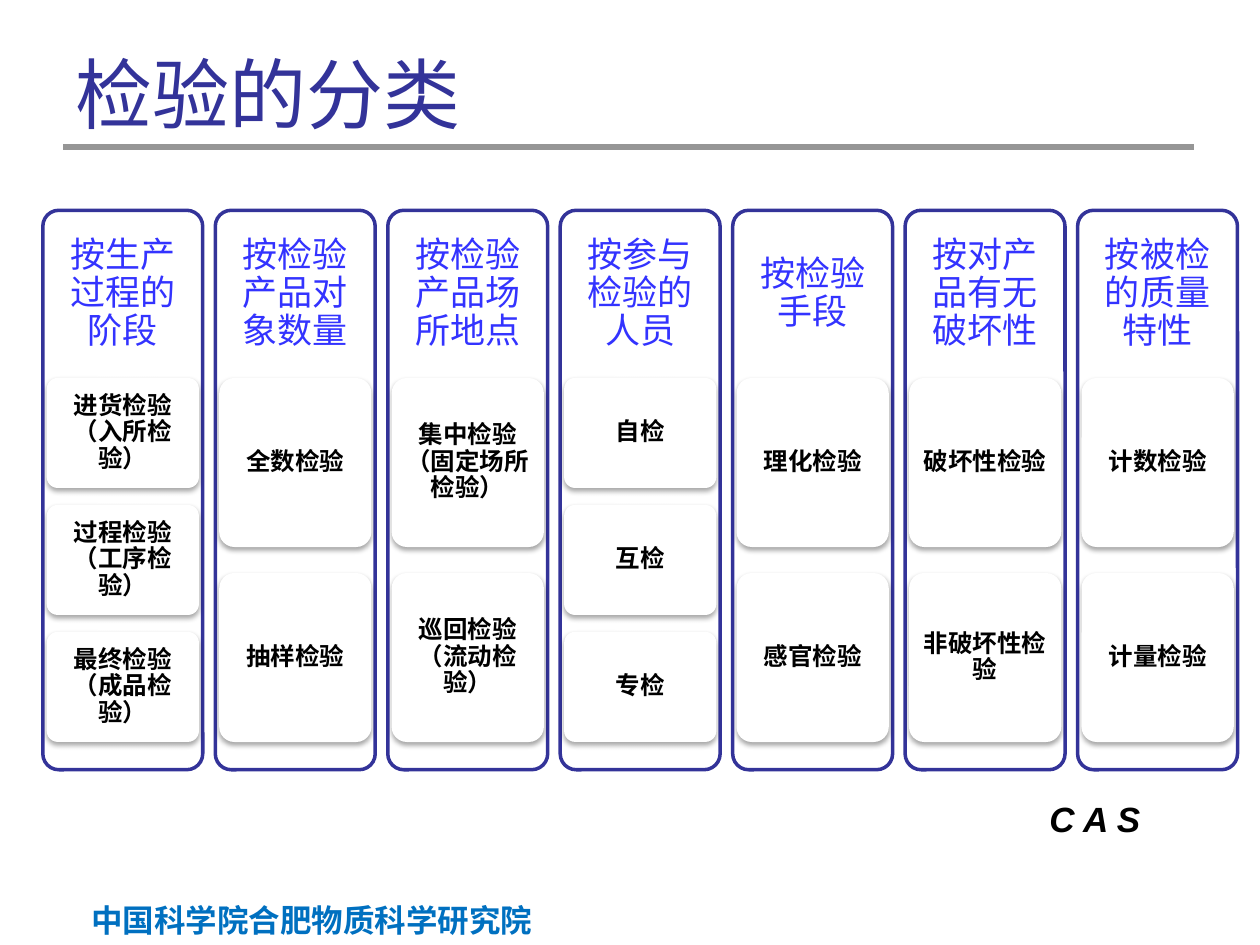
from dataclasses import dataclass
from lxml.etree import SubElement
from pptx import Presentation
from pptx.dml.color import RGBColor
from pptx.enum.shapes import MSO_CONNECTOR as Connector, MSO_SHAPE as Shape
from pptx.enum.text import MSO_ANCHOR as Anchor, MSO_AUTO_SIZE as AutoSize, PP_ALIGN as Align
from pptx.oxml import parse_xml
from pptx.oxml.ns import nsdecls, qn
from pptx.util import Pt


@dataclass(frozen=True)
class Theme:
    navy: str = "333399"
    heading: str = "3333FF"
    footer: str = "0070C0"
    rule: str = "969696"
    ink: str = "000000"
    paper: str = "FFFFFF"
    title_size: int = 44
    heading_size: int = 20
    footer_size: int = 18
    item_size: int = 14
    base_font: str = "Arial"
    title_font: str = "Noto Sans CJK JP"
    item_font: str = "Noto Sans CJK SC"


THEME = Theme()
COLUMN_LEFT, COLUMN_TOP, COLUMN_WIDTH, COLUMN_HEIGHT = 24.5, 120.2, 91.4, 319.7
COLUMN_PITCH = 98.55
HEADING_HEIGHT = 95.8
CARD_INSET, STACK_TOP, STACK_HEIGHT = 2.2, 216, 208
GAP_RATIO = 2 / 13

CATEGORIES = [
    ("按生产过程的阶段", ["进货检验（入所检验）", "过程检验（工序检验）", "最终检验（成品检验）"]),
    ("按检验产品对象数量", ["全数检验", "抽样检验"]),
    ("按检验产品场所地点", ["集中检验（固定场所检验）", "巡回检验（流动检验）"]),
    ("按参与检验的人员", ["自检", "互检", "专检"]),
    ("按检验手段", ["理化检验", "感官检验"]),
    ("按对产品有无破坏性", ["破坏性检验", "非破坏性检验"]),
    ("按被检的质量特性", ["计数检验", "计量检验"]),
]


def rgb(value):
    return RGBColor.from_string(value)


def apply(target, formats):
    for name, value in formats.items():
        setattr(target, name, value)


def write(frame, text, color, font, frame_format=None, paragraph_format=None):
    apply(frame, {"word_wrap": True} | (frame_format or {}))
    paragraph = frame.paragraphs[0]
    apply(paragraph, paragraph_format or {})
    run = paragraph.add_run()
    run.text = text
    apply(run.font, font)
    run.font.color.rgb = rgb(color)
    SubElement(run.font._element, qn("a:ea"), typeface=font["name"])


def add_text(slide, box, *content):
    textbox = slide.shapes.add_textbox(*map(Pt, box))
    write(textbox.text_frame, *content)


def add_rule(slide, left, right, y):
    rule = slide.shapes.add_connector(Connector.STRAIGHT, Pt(left), Pt(y), Pt(right), Pt(y))
    rule.line.color.rgb = rgb(THEME.rule)
    rule.line.width = Pt(3.6)
    SubElement(rule._element.spPr, qn("a:effectLst"))


def add_panel(slide, box):
    panel = slide.shapes.add_shape(Shape.ROUNDED_RECTANGLE, *map(Pt, box))
    panel.adjustments[0] = 0.1
    panel.shadow.inherit = False
    panel.fill.solid()
    panel.fill.fore_color.rgb = rgb(THEME.paper)
    return panel


def add_card(slide, box, label):
    card = add_panel(slide, box)
    card.line.fill.background()
    effects = card._element.spPr.find(qn("a:effectLst"))
    effects.append(parse_xml(
        f'<a:outerShdw {nsdecls("a")} blurRad="{Pt(3.1)}" dist="{Pt(1.8)}" dir="5400000" '
        f'rotWithShape="0"><a:srgbClr val="{THEME.ink}"><a:alpha val="35000"/></a:srgbClr>'
        '</a:outerShdw>'))
    margins = {f"margin_{side}": Pt(2) for side in ("left", "right", "top", "bottom")}
    write(card.text_frame, label, THEME.ink,
          {"name": THEME.item_font, "size": Pt(THEME.item_size), "bold": True},
          margins | {"vertical_anchor": Anchor.MIDDLE},
          {"alignment": Align.CENTER, "line_spacing": 0.9})


def add_category(slide, left, heading, items):
    column = add_panel(slide, (left, COLUMN_TOP, COLUMN_WIDTH, COLUMN_HEIGHT))
    column.line.color.rgb = rgb(THEME.navy)
    column.line.width = Pt(2)
    margins = {f"margin_{side}": Pt(6) for side in ("left", "right", "top", "bottom")}
    add_text(slide, (left, COLUMN_TOP, COLUMN_WIDTH, HEADING_HEIGHT), heading, THEME.heading,
             {"name": THEME.base_font, "size": Pt(THEME.heading_size)},
             margins | {"vertical_anchor": Anchor.MIDDLE},
             {"alignment": Align.CENTER, "line_spacing": 0.9})
    card_height = STACK_HEIGHT / (len(items) + (len(items) - 1) * GAP_RATIO)
    card_pitch = card_height * (1 + GAP_RATIO)
    for row, item in enumerate(items):
        add_card(slide, (left + CARD_INSET, STACK_TOP + row * card_pitch,
                         COLUMN_WIDTH - 2 * CARD_INSET, card_height), item)


def main():
    deck = Presentation()
    apply(deck, {"slide_width": Pt(720), "slide_height": Pt(540)})
    slide = deck.slides.add_slide(deck.slide_layouts[6])
    add_rule(slide, 36, 682.5, 84.2)
    add_text(slide, (42.5, 511.2, 268.8, 29), "中国科学院合肥物质科学研究院", THEME.footer,
             {"name": THEME.base_font, "size": Pt(THEME.footer_size), "bold": True},
             {"auto_size": AutoSize.SHAPE_TO_FIT_TEXT}, {"alignment": Align.RIGHT})
    add_text(slide, (586.8, 452.2, 73.4, 31), "C A S", THEME.ink,
             {"name": THEME.base_font, "size": Pt(THEME.heading_size), "bold": True, "italic": True},
             {"word_wrap": False, "auto_size": AutoSize.SHAPE_TO_FIT_TEXT, "margin_left": Pt(12.8)})
    add_text(slide, (36, 21.6, 437.8, 62.6), "检验的分类", THEME.navy,
             {"name": THEME.title_font, "size": Pt(THEME.title_size)},
             {"vertical_anchor": Anchor.MIDDLE})
    for position, (heading, items) in enumerate(CATEGORIES):
        add_category(slide, COLUMN_LEFT + position * COLUMN_PITCH, heading, items)
    deck.save("out.pptx")


if __name__ == "__main__":
    main()
